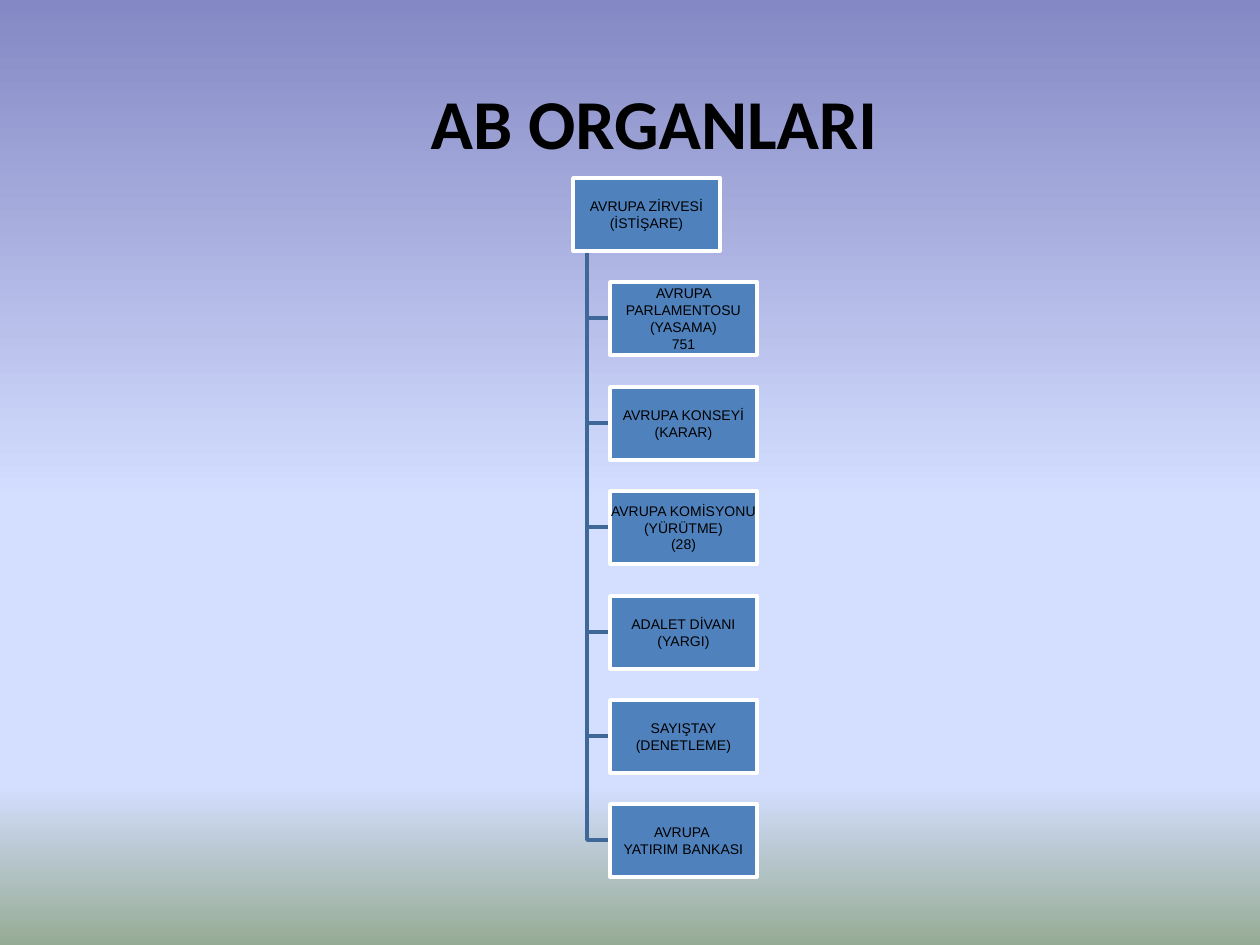
from copy import deepcopy

from pptx import Presentation
from pptx.dml.color import RGBColor
from pptx.enum.shapes import MSO_SHAPE
from pptx.enum.text import MSO_ANCHOR, PP_ALIGN
from pptx.oxml.ns import qn
from pptx.util import Pt

RECT = MSO_SHAPE.RECTANGLE
MIDDLE = MSO_ANCHOR.MIDDLE
CENTER = PP_ALIGN.CENTER
SCALE = 914400 / 126  # EMU per px


def px(n):
    return round(n * SCALE)


def color(code):
    return RGBColor.from_string(code)


class Chart:
    """Style of the organ chart and the slide it stands on."""

    ink, fill, edge, link = "000000", "4F81BD", "FFFFFF", "3F6797"
    wide, high = 147, 73

    def __init__(self, slide):
        self.slide = slide

    def back(self, stops):
        fill = self.slide.background.fill
        fill.gradient()
        fill.gradient_angle = 270
        group = self.slide.element.find(".//" + qn("a:gsLst"))
        while len(group) < len(stops):
            group.append(deepcopy(group[0]))
        for stop, (spot, code) in zip(fill.gradient_stops, stops):
            stop.position = spot
            stop.color.rgb = color(code)

    def label(self, para, text, font, size, bold=False):
        para.alignment = CENTER
        run = para.add_run()
        run.text = text
        run.font.name = font
        run.font.size = Pt(size)
        run.font.bold = bold
        run.font.color.rgb = color(self.ink)

    def title(self, text, x, y, w, h):
        head = self.slide.shapes.title
        head.left, head.top, head.width, head.height = map(px, (x, y, w, h))
        frame = head.text_frame
        frame.vertical_anchor = MIDDLE
        para = frame.paragraphs[0]
        para.add_line_break()
        self.label(para, text, "Calibri", 40, True)

    def elbow(self, x, y, right, low):
        line = self.slide.shapes.build_freeform(px(x), px(y))
        line.add_line_segments([(px(x), px(low)), (px(right), px(low))], close=False)
        shape = line.convert_to_shape()
        shape.shadow.inherit = False
        shape.fill.background()
        shape.line.color.rgb = color(self.link)
        shape.line.width = Pt(2)

    def box(self, lines, x, y):
        shape = self.slide.shapes.add_shape(
            RECT, px(x), px(y), px(self.wide), px(self.high))
        shape.shadow.inherit = False
        shape.fill.solid()
        shape.fill.fore_color.rgb = color(self.fill)
        shape.line.color.rgb = color(self.edge)
        shape.line.width = Pt(2)
        frame = shape.text_frame
        frame.word_wrap = True
        frame.vertical_anchor = MIDDLE
        frame.margin_left = frame.margin_right = px(1)
        frame.margin_top = frame.margin_bottom = px(1)
        for i, line in enumerate(lines):
            para = frame.add_paragraph() if i else frame.paragraphs[0]
            self.label(para, line, "Arial", 8)


ROOT = ["AVRUPA ZİRVESİ", "(İSTİŞARE)"]
ORGANS = [
    ["AVRUPA PARLAMENTOSU", "(YASAMA)", "751"],
    ["AVRUPA KONSEYİ", "(KARAR)"],
    ["AVRUPA KOMİSYONU", "(YÜRÜTME)", "(28)"],
    ["ADALET DİVANI", "(YARGI)"],
    ["SAYIŞTAY", "(DENETLEME)"],
    ["AVRUPA ", "YATIRIM BANKASI"],
]


def main():
    deck = Presentation()
    deck.slide_width, deck.slide_height = px(1260), px(945)
    chart = Chart(deck.slides.add_slide(deck.slide_layouts[5]))

    # Background and title
    chart.back([(0, "8488C4"), (0.53, "D4DEFF"), (0.83, "D4DEFF"), (1, "96AB94")])
    chart.title("AB ORGANLARI", 134, -24, 1040, 198)

    # Links first, so that the boxes cover their ends
    left, top = 573, 178
    stem, child = left + 14, left + 37
    rows = [top + round(104.4 * i) for i in range(1, len(ORGANS) + 1)]
    for y in reversed(rows):
        chart.elbow(stem, top + chart.high, child, y + chart.high // 2)

    # Root and its organs
    chart.box(ROOT, left, top)
    for lines, y in zip(ORGANS, rows):
        chart.box(lines, child, y)

    deck.save("out.pptx")


if __name__ == "__main__":
    main()
